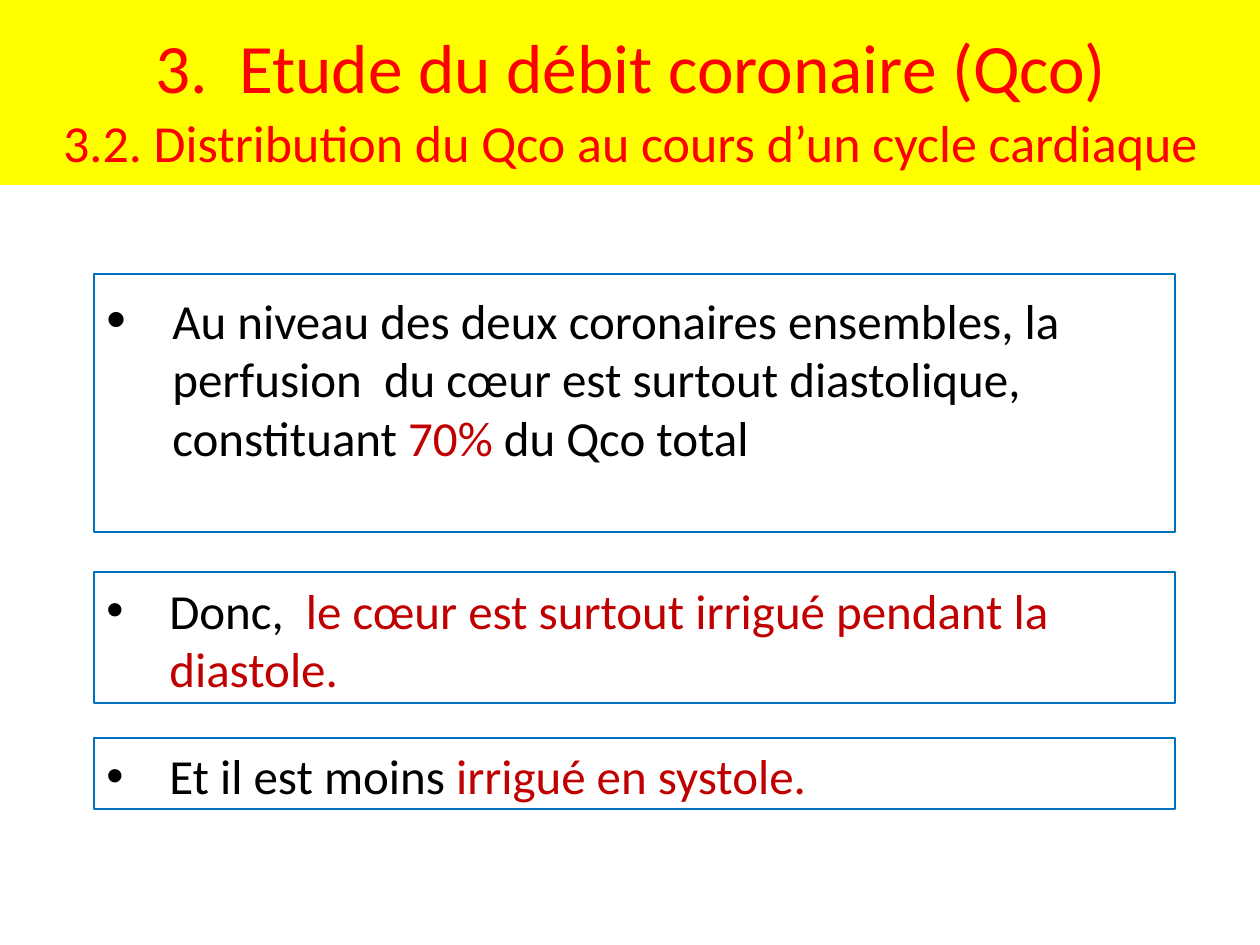
import pptx
import pptx.dml.color
import pptx.enum.shapes
import pptx.enum.text
import pptx.util
from lxml import etree

COLORS = {
    "banner": "FFFF00",
    "heading": "FF0000",
    "text": "000000",
    "accent": "C00000",
    "border": "0070C0",
}
FONT = "Calibri"
PX_PER_INCH = 126


def px(length):
    return pptx.util.Emu(round(length * 914400 / PX_PER_INCH))


def rgb(name):
    return pptx.dml.color.RGBColor.from_string(COLORS[name])


def add_text(paragraph, text, size=28, color="text"):
    run = paragraph.add_run()
    run.text = text
    run.font.name = FONT
    run.font.size = pptx.util.Pt(size)
    run.font.color.rgb = rgb(color)


def set_indent(paragraph, left, hanging=0):
    properties = paragraph._p.get_or_add_pPr()
    properties.set("marL", str(px(left)))
    properties.set("indent", str(-px(hanging)))
    return properties


def add_bullet(paragraph, indent, percent):
    properties = set_indent(paragraph, indent, indent)
    for tag, attribute, value in (
        ("buSzPct", "val", str(percent * 1000)),
        ("buFont", "typeface", "Arial"),
        ("buChar", "char", "•"),
    ):
        bullet = etree.SubElement(properties, pptx.oxml.ns.qn("a:" + tag))
        bullet.set(attribute, value)


class SlideBuilder:
    def __init__(self, slide):
        self.slide = slide

    def box(self, left, top, width, height, inset_top, fill=None, line=None):
        shape = self.slide.shapes.add_shape(
            pptx.enum.shapes.MSO_SHAPE.RECTANGLE,
            px(left), px(top), px(width), px(height))
        shape.shadow.inherit = False
        if fill:
            shape.fill.solid()
            shape.fill.fore_color.rgb = rgb(fill)
        else:
            shape.fill.background()
        if line:
            shape.line.color.rgb = rgb(line)
            shape.line.width = pptx.util.Pt(0.75)
        else:
            shape.line.fill.background()
        frame = shape.text_frame
        frame.word_wrap = True
        frame.margin_top = px(inset_top)
        frame.vertical_anchor = pptx.enum.text.MSO_ANCHOR.TOP
        return frame

    def banner(self, left, top, width, height, lines):
        frame = self.box(left, top, width, height, 22, fill="banner")
        frame.vertical_anchor = pptx.enum.text.MSO_ANCHOR.MIDDLE
        for number, (text, size) in enumerate(lines):
            heading = frame.add_paragraph() if number else frame.paragraphs[0]
            heading.alignment = pptx.enum.text.PP_ALIGN.CENTER
            heading.space_before = pptx.util.Pt(2 if number else 0)
            set_indent(heading, 112)
            add_text(heading, text, size=size, color="heading")

    def statement(self, top, height, parts, inset_top=8, indent=63, bullet=100):
        frame = self.box(94, top, 1081, height, inset_top, line="border")
        sentence = frame.paragraphs[0]
        sentence.alignment = pptx.enum.text.PP_ALIGN.LEFT
        add_bullet(sentence, indent, bullet)
        for text, color in parts:
            add_text(sentence, text, color=color)


def main():
    presentation = pptx.Presentation()
    presentation.slide_width = px(1260)
    presentation.slide_height = px(945)
    blank = presentation.slide_layouts[6]
    builder = SlideBuilder(presentation.slides.add_slide(blank))

    # Heading banner
    builder.banner(-115, -4, 1380, 189, [
        ("3.  Etude du débit coronaire (Qco)", 39.6),
        ("3.2. Distribution du Qco au cours d’un cycle cardiaque", 29.7),
    ])

    # Diastolic share of the coronary flow
    builder.statement(274, 258, [
        ("Au niveau des deux coronaires ensembles, la perfusion  du cœur "
         "est surtout diastolique, constituant ", "text"),
        ("70%", "accent"),
        (" du Qco total", "text"),
    ], inset_top=16, indent=66, bullet=114)

    # Conclusions: diastole, then systole
    builder.statement(572, 131, [
        ("Donc,  ", "text"),
        ("le cœur est surtout irrigué pendant la diastole.", "accent"),
    ])
    builder.statement(738, 71, [
        ("Et il est moins ", "text"),
        ("irrigué en systole.", "accent"),
    ])

    presentation.save("out.pptx")


if __name__ == "__main__":
    main()
